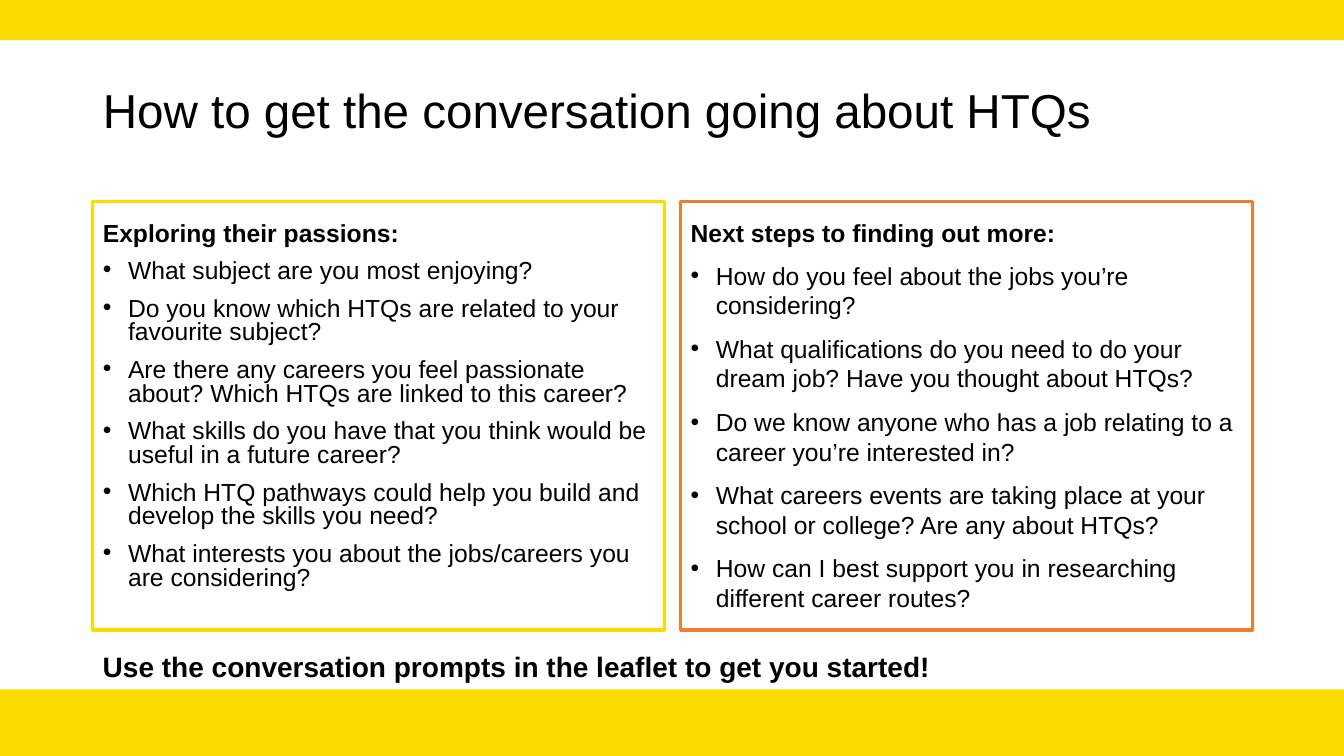
from lxml import etree
from pptx import Presentation
from pptx.dml.color import RGBColor
from pptx.enum.shapes import MSO_SHAPE
from pptx.enum.text import MSO_ANCHOR, MSO_AUTO_SIZE, PP_ALIGN
from pptx.oxml.ns import qn
from pptx.util import Inches, Pt

RECT = MSO_SHAPE.RECTANGLE
MIDDLE, TOP = MSO_ANCHOR.MIDDLE, MSO_ANCHOR.TOP
LEFT = PP_ALIGN.LEFT
NO_FIT = MSO_AUTO_SIZE.NONE

YELLOW = RGBColor(0xF9, 0xDB, 0x00)
ORANGE = RGBColor(0xED, 0x7D, 0x31)
BLACK = RGBColor(0, 0, 0)
FONT = "Arial"

WIDTH, HEIGHT = 13.33, 7.5
EDGE = 0.92
PANEL_W, PANEL_H, PANEL_TOP = 5.67, 4.25, 2
STEP = PANEL_W + 0.16
INDENT = 0.25

PANELS = [
    (YELLOW, 0.8, "Exploring their passions:", [
        "What subject are you most enjoying?",
        "Do you know which HTQs are related to your favourite subject?",
        "Are there any careers you feel passionate about? "
        "Which HTQs are linked to this career?",
        "What skills do you have that you think would be useful "
        "in a future career?",
        "Which HTQ pathways could help you build and develop "
        "the skills you need?",
        "What interests you about the jobs/careers you are considering?",
    ]),
    (ORANGE, 1, "Next steps to finding out more:", [
        "How do you feel about the jobs you’re considering?",
        "What qualifications do you need to do your dream job? "
        "Have you thought about HTQs?",
        "Do we know anyone who has a job relating to a career "
        "you’re interested in?",
        "What careers events are taking place at your school or college? "
        "Are any about HTQs?",
        "How can I best support you in researching different career routes?",
    ]),
]


def place(shape, left, top, width, height):
    shape.left, shape.top = Inches(left), Inches(top)
    shape.width, shape.height = Inches(width), Inches(height)


def band(slide, top, height):
    bar = slide.shapes.add_shape(
        RECT, 0, Inches(top), Inches(WIDTH), Inches(height))
    bar.shadow.inherit = False
    bar.fill.solid()
    bar.fill.fore_color.rgb = YELLOW
    bar.line.fill.background()


def write(para, text, size, bold=False, space=1, before=0):
    para.alignment = LEFT
    para.line_spacing = space
    para.space_before = Pt(before)
    run = para.add_run()
    run.text = text
    font = run.font
    font.name, font.size, font.bold = FONT, Pt(size), bold
    font.color.rgb = BLACK


def mark(para, bullet):
    """Give the paragraph a hanging bullet, or none."""
    props = para._p.get_or_add_pPr()
    indent = Inches(INDENT) if bullet else 0
    props.set("marL", str(indent))
    props.set("indent", str(-indent))
    if bullet:
        face = etree.SubElement(props, qn("a:buFont"))
        face.set("typeface", FONT)
        etree.SubElement(props, qn("a:buChar")).set("char", "•")
    else:
        etree.SubElement(props, qn("a:buNone"))


def panel(shape, col, color, space, head, items):
    place(shape, EDGE + col * STEP, PANEL_TOP, PANEL_W, PANEL_H)
    shape.line.color.rgb = color
    shape.line.width = Pt(2.25)
    frame = shape.text_frame
    frame.auto_size = NO_FIT
    frame.vertical_anchor = TOP
    frame.margin_top = Inches(0.24)
    para = frame.paragraphs[0]
    mark(para, False)
    write(para, head, 17.6, bold=True, space=0.7)
    for item in items:
        para = frame.add_paragraph()
        mark(para, True)
        write(para, item, 17.6, space=space, before=10)


def main():
    deck = Presentation()
    deck.slide_width, deck.slide_height = Inches(WIDTH), Inches(HEIGHT)
    slide = deck.slides.add_slide(deck.slide_layouts[3])
    band(slide, 0, 0.4)
    band(slide, 6.84, HEIGHT - 6.84)

    title = slide.shapes.title
    place(title, EDGE, 0.4, 10.04, 1.45)
    title.text_frame.auto_size = NO_FIT
    title.text_frame.vertical_anchor = MIDDLE
    write(title.text_frame.paragraphs[0],
          "How to get the conversation going about HTQs", 34, space=0.9)

    for col, spec in enumerate(PANELS):
        panel(slide.placeholders[col + 1], col, *spec)

    note = slide.shapes.add_textbox(0, 0, 0, 0)
    place(note, EDGE, 6.39, 10.99, 0.44)
    note.text_frame.word_wrap = True
    write(note.text_frame.paragraphs[0],
          "Use the conversation prompts in the leaflet to get you started!",
          20, bold=True)

    deck.save("out.pptx")


if __name__ == "__main__":
    main()
